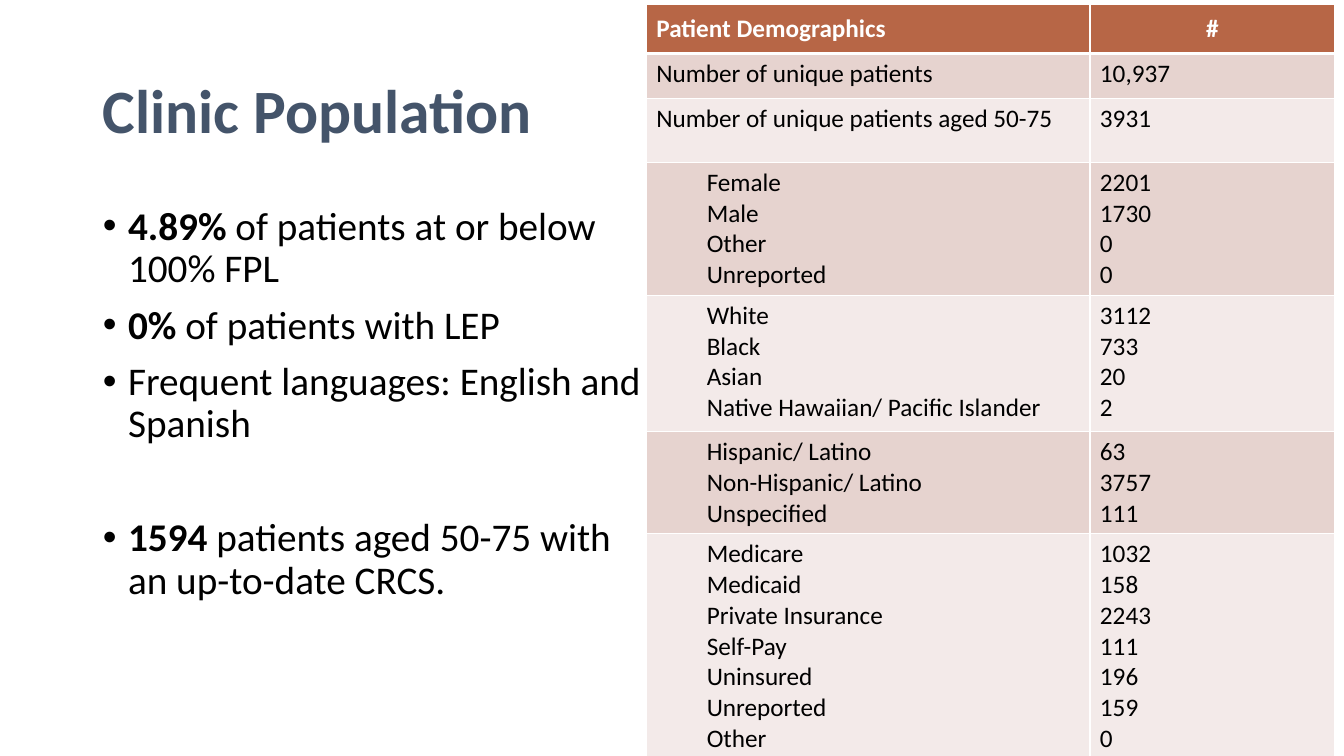
import pptx
import pptx.util
import pptx.dml.color
import pptx.enum.text
import pptx.oxml.ns
import lxml.etree

Inches, Pt = pptx.util.Inches, pptx.util.Pt
Align, Anchor = pptx.enum.text.PP_ALIGN, pptx.enum.text.MSO_ANCHOR
hues = {"title": "44546A", "text": "000000", "white": "FFFFFF",
        "head": "B76646", "dark": "E6D3CF", "light": "F3EAE9"}


def style(run, size, hue, bold):
    font = run.font
    font.name, font.size, font.bold = "Calibri", Pt(size), bold
    font.color.rgb = pptx.dml.color.RGBColor.from_string(hues[hue])


def border(cell, side, width):
    props = cell._tc.get_or_add_tcPr()
    line = lxml.etree.SubElement(props, pptx.oxml.ns.qn("a:ln" + side), w=str(Pt(width)))
    fill = lxml.etree.SubElement(line, pptx.oxml.ns.qn("a:solidFill"))
    lxml.etree.SubElement(fill, pptx.oxml.ns.qn("a:srgbClr"), val=hues["white"])


deck = pptx.Presentation()
deck.slide_width, deck.slide_height = Inches(13.33), Inches(7.5)
slide = deck.slides.add_slide(deck.slide_layouts[1])

# Title
title = slide.shapes.title
title.left, title.top, title.width, title.height = map(Inches, (0.92, 0.4, 11.5, 1.45))
frame = title.text_frame
frame.text = "Clinic Population"
frame.vertical_anchor = Anchor.MIDDLE
frame.auto_size = pptx.enum.text.MSO_AUTO_SIZE.NONE
para = frame.paragraphs[0]
para.alignment, para.line_spacing = Align.LEFT, 0.9
style(para.runs[0], 44, "title", True)

# Bullet list: bold part, plain part, space before
points = [
    ("4.89% ", "of patients at or below 100% FPL", 10),
    ("0% ", "of patients with LEP", 10),
    ("", "Frequent languages: English and Spanish", 10),
    ("1594", " patients aged 50-75 with an up-to-date CRCS.", 51),
]
body = slide.placeholders[1]
body.left, body.top, body.width, body.height = map(Inches, (0.92, 2, 5.66, 4.76))
frame = body.text_frame
frame.auto_size = pptx.enum.text.MSO_AUTO_SIZE.NONE
for i, (strong, plain, gap) in enumerate(points):
    para = frame.paragraphs[0] if i == 0 else frame.add_paragraph()
    para.line_spacing, para.space_before = 0.9, Pt(gap)
    props = para._p.get_or_add_pPr()
    props.set("marL", str(Inches(0.25)))
    props.set("indent", str(Inches(-0.25)))
    lxml.etree.SubElement(props, pptx.oxml.ns.qn("a:buFont"), typeface="Arial")
    lxml.etree.SubElement(props, pptx.oxml.ns.qn("a:buChar"), char="•")
    for words, bold in ((strong, True), (plain, False)):
        if words:
            run = para.add_run()
            run.text = words
            style(run, 28, "text", bold)

# Demographics table: height, labels, counts
rows = [
    (0.49, ["Patient Demographics"], ["#"]),
    (0.45, ["Number of unique patients"], ["10,937"]),
    (0.63, ["Number of unique patients aged 50-75"], ["3931"]),
    (1.26, ["Female", "Male", "Other", "Unreported"], ["2201", "1730", "0", "0"]),
    (1.35, ["White", "Black", "Asian", "Native Hawaiian/ Pacific Islander"],
     ["3112", "733", "20", "2"]),
    (0.97, ["Hispanic/ Latino", "Non-Hispanic/ Latino", "Unspecified"],
     ["63", "3757", "111"]),
    (2.14, ["Medicare", "Medicaid", "Private Insurance", "Self-Pay", "Uninsured",
            "Unreported", "Other"],
     ["1032", "158", "2243", "111", "196", "159", "0"]),
]
table = slide.shapes.add_table(len(rows), 2, Inches(6.41), Inches(0.04),
                               Inches(6.83), Inches(7.29)).table
table.columns[0].width, table.columns[1].width = Inches(4.4), Inches(2.43)
for r, (height, *texts) in enumerate(rows):
    table.rows[r].height = Inches(height)
    head = r == 0
    for c, lines in enumerate(texts):
        cell = table.cell(r, c)
        for side in "LRTB":
            thick = (r, side) in ((0, "B"), (1, "T"))
            border(cell, side, 3 if thick else 1)
        cell.fill.solid()
        shade = "head" if head else "dark" if r % 2 else "light"
        cell.fill.fore_color.rgb = pptx.dml.color.RGBColor.from_string(hues[shade])
        cell.vertical_anchor = Anchor.MIDDLE if head else Anchor.TOP
        cell.text_frame.text = "\n".join(lines)
        for para in cell.text_frame.paragraphs:
            para.alignment = Align.CENTER if head and c == 1 else Align.LEFT
            if c == 0 and len(lines) > 1:
                para._p.get_or_add_pPr().set("marL", str(Inches(0.5)))
            style(para.runs[0], 18, "white" if head else "text", head)

deck.save("out.pptx")
